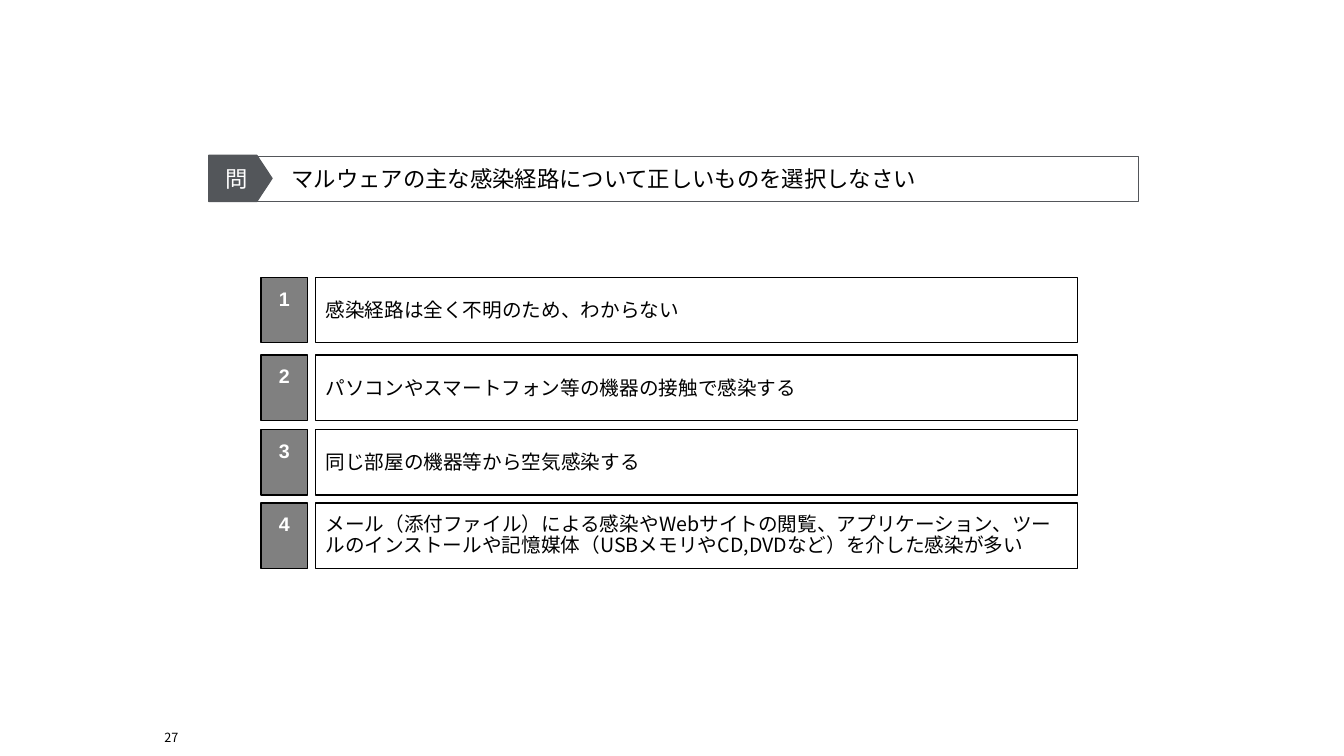
from dataclasses import dataclass

from lxml.etree import SubElement
from pptx import Presentation
from pptx.dml.color import RGBColor
from pptx.enum.lang import MSO_LANGUAGE_ID
from pptx.enum.shapes import MSO_SHAPE
from pptx.enum.text import MSO_ANCHOR, MSO_AUTO_SIZE, PP_ALIGN
from pptx.oxml.ns import qn
from pptx.util import Inches, Pt


@dataclass(frozen=True)
class Theme:
    black: str = "000000"
    white: str = "FFFFFF"
    slate: str = "53565A"
    grey: str = "808080"
    latin: str = "Arial"
    japanese: str = "Noto Sans CJK JP"
    question_size: int = 16
    answer_size: int = 14
    page_number_size: int = 9


class QuizSlide:
    def __init__(self, deck, theme):
        self.theme = theme
        self.page = deck.slides.add_slide(deck.slide_layouts[5])

    def place(self, shape, left, top, width, height):
        shape.left, shape.top = Inches(left), Inches(top)
        shape.width, shape.height = Inches(width), Inches(height)

    def paint(self, shape, fill, line, weight=1):
        """Set fill and outline; a fill of None leaves the shape hollow."""
        if fill:
            shape.fill.solid()
            shape.fill.fore_color.rgb = RGBColor.from_string(fill)
        else:
            shape.fill.background()
        shape.line.color.rgb = RGBColor.from_string(line)
        shape.line.width = Pt(weight)

    def set_text(self, shape, runs, size, color, align=PP_ALIGN.LEFT,
                 anchor=MSO_ANCHOR.MIDDLE, wrap=True, bold=False, spacing=None):
        """Fill the first paragraph with (text, font name) runs."""
        frame = shape.text_frame
        frame.auto_size = MSO_AUTO_SIZE.NONE
        frame.word_wrap = wrap
        frame.vertical_anchor = anchor
        para = frame.paragraphs[0]
        para.alignment = align
        if spacing:
            para.line_spacing = Pt(spacing)
        for text, name in runs:
            span = para.add_run()
            span.text = text
            font = span.font
            font.size, font.bold, font.name = Pt(size), bold, name
            font.color.rgb = RGBColor.from_string(color)
            font.language_id = MSO_LANGUAGE_ID.JAPANESE
            properties = span._r.get_or_add_rPr()
            SubElement(properties, qn("a:ea"), typeface=self.theme.japanese)

    def set_insets(self, shape, left, others):
        frame = shape.text_frame
        frame.margin_left = Inches(left)
        frame.margin_top = frame.margin_right = frame.margin_bottom = Inches(others)

    def add_box(self, kind, left, top, width, height, fill, line, weight=1):
        box = self.page.shapes.add_shape(
            kind, Inches(left), Inches(top), Inches(width), Inches(height))
        box.shadow.inherit = False
        self.paint(box, fill, line, weight)
        return box

    def add_page_number(self, number):
        box = self.page.shapes.add_textbox(
            Inches(1.57), Inches(7.2), Inches(0.2), Inches(0.19))
        self.set_insets(box, 0, 0)
        self.set_text(box, [(number, self.theme.japanese)],
                      self.theme.page_number_size, self.theme.black,
                      PP_ALIGN.RIGHT, MSO_ANCHOR.BOTTOM, wrap=False)

    def add_question(self, text):
        theme = self.theme
        title = self.page.shapes.title
        self.place(title, 2.39, 1.55, 8.9, 0.45)
        self.paint(title, theme.white, theme.slate)
        self.set_insets(title, 0.28, 0.04)
        self.set_text(title, [(text, theme.latin)], theme.question_size, theme.black)

        marker = self.add_box(MSO_SHAPE.PENTAGON, 2.07, 1.54, 0.63, 0.46,
                              theme.slate, theme.slate, 0.75)
        marker.adjustments[0] = 0.33
        self.set_text(marker, [("問", theme.japanese)], theme.question_size,
                      theme.white, PP_ALIGN.CENTER, wrap=False)

    def add_answer(self, number, top, runs, spacing=None):
        theme = self.theme
        answer = self.add_box(MSO_SHAPE.RECTANGLE, 3.13, top, 7.56, 0.65,
                              None, theme.black)
        self.set_text(answer, runs, theme.answer_size, theme.black, spacing=spacing)
        label = self.add_box(MSO_SHAPE.RECTANGLE, 2.59, top, 0.46, 0.65,
                             theme.grey, theme.black)
        self.set_text(label, [(f"{number}　", theme.latin)], theme.answer_size,
                      theme.white, PP_ALIGN.CENTER, bold=True)


def main():
    deck = Presentation()
    deck.slide_width, deck.slide_height = Inches(13.33), Inches(7.5)
    theme = Theme()
    quiz = QuizSlide(deck, theme)
    quiz.add_page_number("27")
    quiz.add_question("　マルウェアの主な感染経路について正しいものを選択しなさい")

    answers = [
        (2.75, [("感染経路は全く不明のため、わからない", theme.latin)], None),
        (3.52, [("パソコンやスマートフォン等の機器の接触で感染する", theme.latin)], None),
        (4.26, [("同じ部屋の機器等から空気感染する", theme.latin)], None),
        (4.99, [("メール（添付ファイル）による感染やWebサイトの閲覧、アプリケーション、"
                 "ツールのインストールや記憶媒体（USBメモリやCD,DVDなど）を介した感染",
                 theme.japanese), ("が多い", theme.latin)], 15),
    ]
    for number, (top, runs, spacing) in enumerate(answers, start=1):
        quiz.add_answer(number, top, runs, spacing)
    deck.save("out.pptx")


if __name__ == "__main__":
    main()
